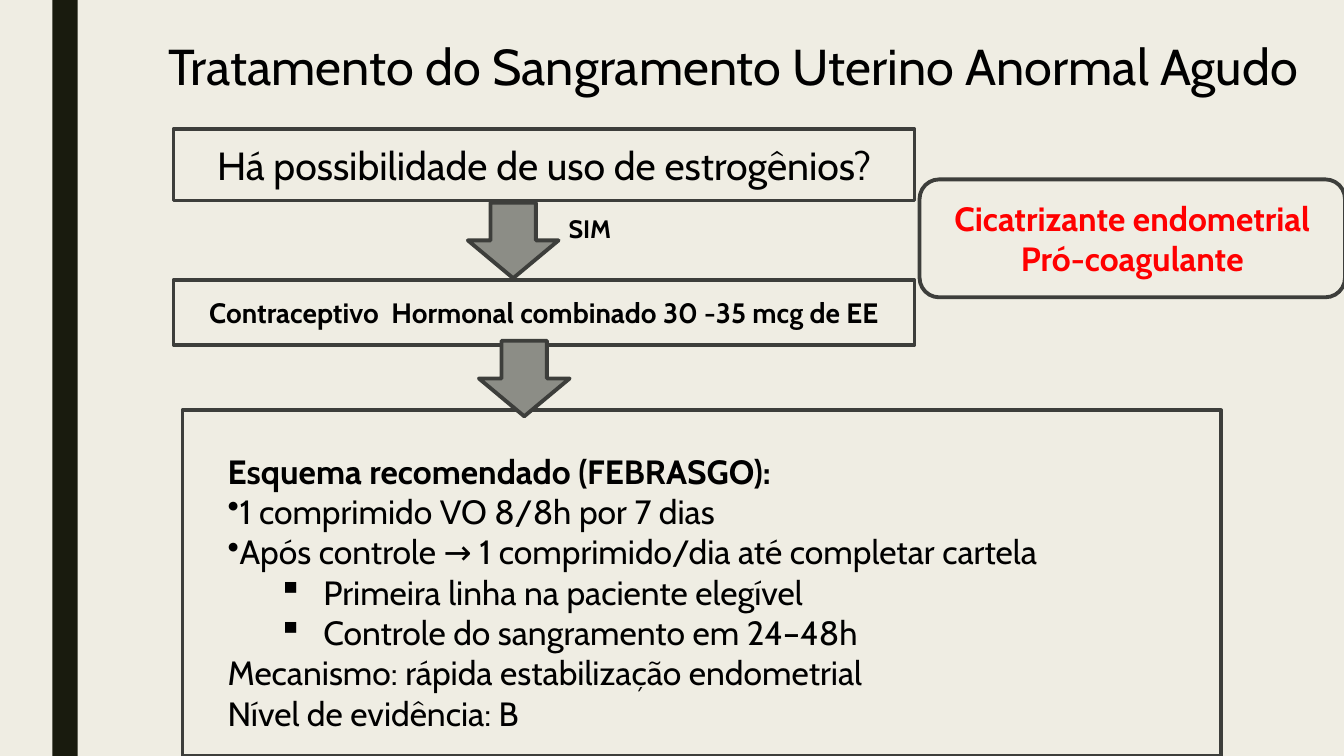
from lxml.etree import SubElement
from pptx import Presentation
from pptx.dml.color import RGBColor
from pptx.enum.shapes import MSO_SHAPE
from pptx.enum.text import MSO_ANCHOR, PP_ALIGN
from pptx.oxml.ns import qn
from pptx.util import Inches, Pt

COLORS = {
    "background": "EFEDE3",
    "bar": "191B0E",
    "outline": "3D3E3B",
    "arrow": "8C8D86",
    "text": "000000",
    "highlight": "FF0000",
}
FONT = "Cabin"
BOX_LEFT, BOX_WIDTH = 1.72, 7.35
ARROW_SIZE = (0.9, 0.75)

# Text, bold, bullet character, left margin and first-line indent in inches
REGIMEN = [
    ("Esquema recomendado (FEBRASGO):", True, None, 0, 0),
    ("1 comprimido VO 8/8h por 7 dias", False, "•", 0, 0),
    ("Após controle → 1 comprimido/dia até completar cartela", False, "•", 0, 0),
    ("Primeira linha na paciente elegível", False, "▪", 0.95, -0.45),
    ("Controle do sangramento em 24–48h", False, "▪", 0.95, -0.45),
    ("Mecanismo: rápida estabilização endometrial", False, None, 0, 0),
    ("Nível de evidência: B", False, None, 0, 0),
]


def color(name):
    return RGBColor.from_string(COLORS[name])


def add_span(para, text, size, bold=False, ink="text"):
    span = para.add_run()
    span.text = text
    for name, value in {"name": FONT, "size": Pt(size), "bold": bold}.items():
        setattr(span.font, name, value)
    span.font.color.rgb = color(ink)


def set_bullet(para, character, margin, indent):
    properties = para._p.get_or_add_pPr()
    properties.set("marL", str(Inches(margin)))
    properties.set("indent", str(Inches(indent)))
    if character:
        SubElement(properties, qn("a:buChar")).set("char", character)
    else:
        SubElement(properties, qn("a:buNone"))


def add_figure(page, kind, place, fill=None, line=None):
    """Add a preset shape without shadow, filled and outlined only when asked."""
    figure = page.shapes.add_shape(kind, *map(Inches, place))
    figure.shadow.inherit = False
    if fill:
        figure.fill.solid()
        figure.fill.fore_color.rgb = color(fill)
    else:
        figure.fill.background()
    if line:
        figure.line.color.rgb = color(line)
        figure.line.width = Pt(2.75)
    else:
        figure.line.fill.background()
    return figure


def add_label_box(page, kind, place, lines, size, bold=False, ink="text"):
    box = add_figure(page, kind, place, line="outline")
    frame = box.text_frame
    frame.word_wrap = True
    frame.vertical_anchor = MSO_ANCHOR.MIDDLE
    for index, text in enumerate(lines):
        para = frame.paragraphs[0] if index == 0 else frame.add_paragraph()
        para.alignment = PP_ALIGN.CENTER
        add_span(para, text, size, bold, ink)


def add_down_arrow(page, left, top):
    add_figure(page, MSO_SHAPE.DOWN_ARROW, (left, top, *ARROW_SIZE),
               fill="arrow", line="outline")


def add_text_frame(page, place):
    frame = page.shapes.add_textbox(*map(Inches, place)).text_frame
    frame.word_wrap = True
    return frame


def set_title(page, text):
    title = page.shapes.title
    place = {"left": 1.57, "top": 0.3, "width": 11.76, "height": 0.71}
    for name, value in place.items():
        setattr(title, name, Inches(value))
    frame = title.text_frame
    frame.word_wrap = True
    frame.vertical_anchor = MSO_ANCHOR.TOP
    para = frame.paragraphs[0]
    para.alignment = PP_ALIGN.LEFT
    add_span(para, text, 36)


def add_regimen(page):
    add_figure(page, MSO_SHAPE.RECTANGLE, (1.81, 4.07, 10.3, 3.43), line="outline")
    frame = add_text_frame(page, (2.16, 4.42, 9.53, 2.95))
    for index, (text, bold, bullet, margin, indent) in enumerate(REGIMEN):
        para = frame.paragraphs[0] if index == 0 else frame.add_paragraph()
        set_bullet(para, bullet, margin, indent)
        add_span(para, text, 24, bold)


def main():
    deck = Presentation()
    deck.slide_width, deck.slide_height = Inches(13.33), Inches(7.5)
    page = deck.slides.add_slide(deck.slide_layouts[5])
    page.background.fill.solid()
    page.background.fill.fore_color.rgb = color("background")

    add_figure(page, MSO_SHAPE.RECTANGLE, (0.52, 0, 0.25, 7.5), fill="bar")
    set_title(page, "Tratamento do Sangramento Uterino Anormal Agudo")

    add_label_box(page, MSO_SHAPE.RECTANGLE, (BOX_LEFT, 1.28, BOX_WIDTH, 0.71),
                  ["Há possibilidade de uso de estrogênios?"], 28)
    add_down_arrow(page, 4.64, 2.01)
    answer = add_text_frame(page, (5.54, 2.07, 1.82, 0.4))
    add_span(answer.paragraphs[0], "SIM", 18, bold=True)
    add_label_box(page, MSO_SHAPE.RECTANGLE, (BOX_LEFT, 2.78, BOX_WIDTH, 0.64),
                  ["Contraceptivo  Hormonal combinado 30 -35 mcg de EE"], 20, bold=True)

    add_regimen(page)
    add_down_arrow(page, 4.75, 3.38)
    add_label_box(page, MSO_SHAPE.ROUNDED_RECTANGLE, (9.12, 1.78, 4.22, 1.17),
                  ["Cicatrizante endometrial", "Pró-coagulante"], 24,
                  bold=True, ink="highlight")
    deck.save("out.pptx")


if __name__ == "__main__":
    main()
